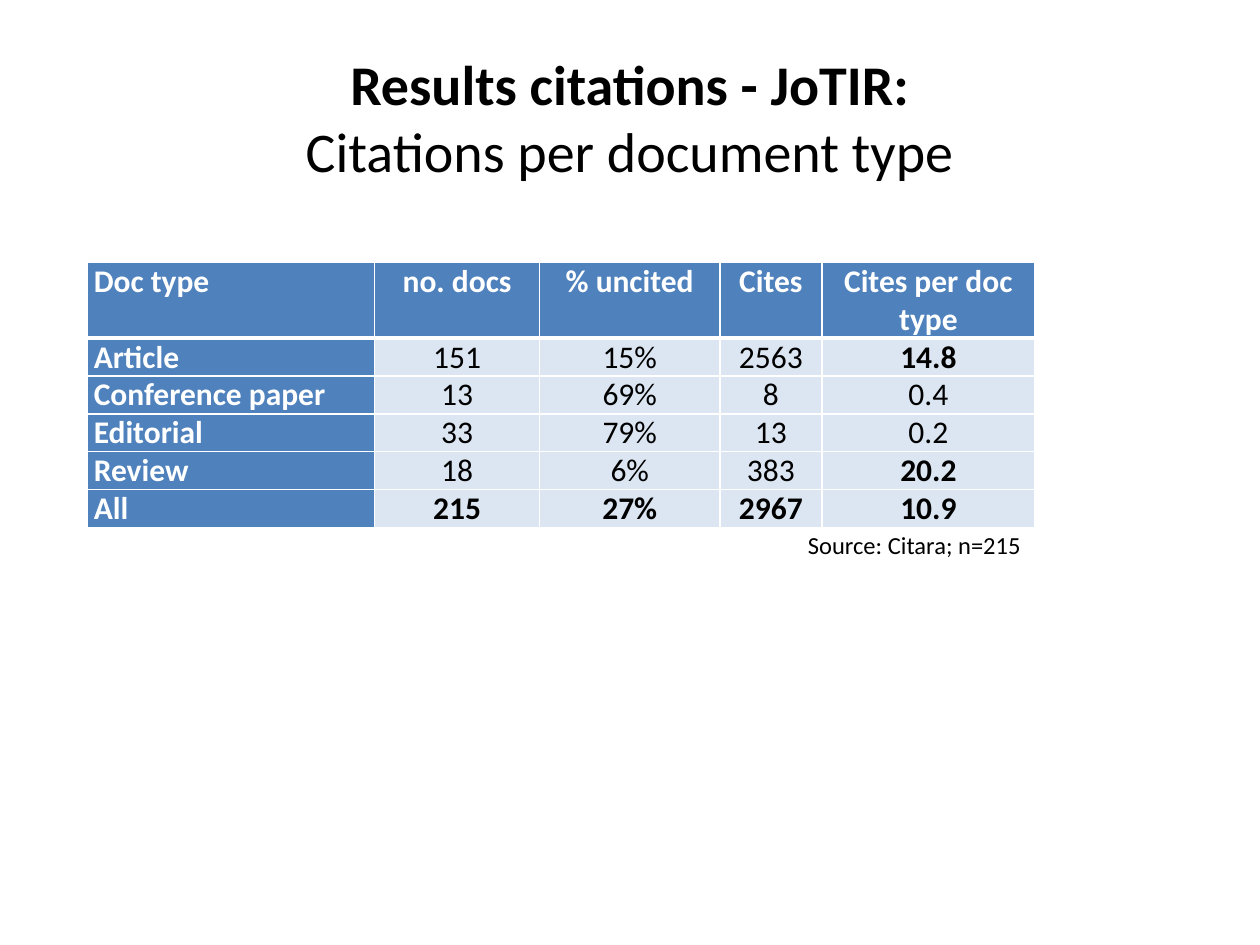
import dataclasses

import lxml.etree
import pptx
import pptx.dml.color
import pptx.enum.text
import pptx.oxml.ns
import pptx.util

Cm = pptx.util.Cm
ALIGN = pptx.enum.text.PP_ALIGN
ANCHOR = pptx.enum.text.MSO_ANCHOR
FIT = pptx.enum.text.MSO_AUTO_SIZE


@dataclasses.dataclass(frozen=True)
class Theme:
    font: str = "Calibri"
    text: str = "000000"
    light: str = "FFFFFF"
    header: str = "4F81BD"
    body: str = "DCE6F2"
    title_size: int = 32
    table_size: int = 18
    source_size: int = 14
    thin_border: int = 1
    thick_border: int = 3


class SlideBuilder:
    def __init__(self, slide, theme):
        self.slide = slide
        self.theme = theme

    def apply(self, target, values):
        for name, value in values.items():
            setattr(target, name, value)

    def add_run(self, paragraph, text, size, color, bold=False):
        run = paragraph.add_run()
        run.text = text
        self.apply(run.font, {"name": self.theme.font, "size": pptx.util.Pt(size), "bold": bold})
        run.font.color.rgb = pptx.dml.color.RGBColor.from_string(color)

    def add_text(self, box, lines, size, alignment, frame_format):
        shape = self.slide.shapes.add_textbox(*map(Cm, box))
        self.apply(shape.text_frame, {"word_wrap": True, **frame_format})
        paragraph = shape.text_frame.paragraphs[0]
        paragraph.alignment = alignment
        for index, (text, bold) in enumerate(lines):
            if index:
                paragraph.add_line_break()
            self.add_run(paragraph, text, size, self.theme.text, bold)

    def add_border(self, cell, side, width):
        properties = cell._tc.get_or_add_tcPr()
        qn = pptx.oxml.ns.qn
        line = lxml.etree.SubElement(properties, qn(f"a:ln{side}"), w=str(pptx.util.Pt(width)))
        fill = lxml.etree.SubElement(line, qn("a:solidFill"))
        lxml.etree.SubElement(fill, qn("a:srgbClr"), val=self.theme.light)

    def format_cell(self, cell, text, row, column, bold):
        theme = self.theme
        is_header = row == 0 or column == 0
        self.apply(cell, {"margin_left": Cm(0.13), "margin_right": Cm(0.13),
                          "margin_top": 0, "margin_bottom": 0})
        thick_side = {0: "B", 1: "T"}.get(row)
        for side in "LRTB":
            self.add_border(cell, side, theme.thick_border if side == thick_side else theme.thin_border)
        cell.fill.solid()
        cell.fill.fore_color.rgb = pptx.dml.color.RGBColor.from_string(
            theme.header if is_header else theme.body)
        paragraph = cell.text_frame.paragraphs[0]
        paragraph.alignment = ALIGN.CENTER if column else ALIGN.JUSTIFY
        self.add_run(paragraph, text, theme.table_size,
                     theme.light if is_header else theme.text, is_header or bold)

    def add_table(self, left, top, widths, heights, rows, bold_cells):
        table = self.slide.shapes.add_table(
            len(rows), len(widths), Cm(left), Cm(top), Cm(sum(widths)), Cm(sum(heights))).table
        for column, width in zip(table.columns, widths):
            column.width = Cm(width)
        for row, height in zip(table.rows, heights):
            row.height = Cm(height)
        for row, values in enumerate(rows):
            for column, text in enumerate(values):
                self.format_cell(table.cell(row, column), text, row, column,
                                 (row, column) in bold_cells)


def main():
    presentation = pptx.Presentation()
    presentation.slide_width = Cm(25.4)
    presentation.slide_height = Cm(19.05)
    theme = Theme()
    builder = SlideBuilder(presentation.slides.add_slide(presentation.slide_layouts[6]), theme)

    builder.add_text((1.27, 0.76, 22.86, 3.18),
                     [("Results citations - JoTIR:", True), ("Citations per document type", False)],
                     theme.title_size, ALIGN.CENTER, {"vertical_anchor": ANCHOR.MIDDLE})

    rows = [
        ("Doc type", "no. docs", "% uncited", "Cites", "Cites per doc type"),
        ("Article", "151", "15%", "2563", "14.8"),
        ("Conference paper", "13", "69%", "8", "0.4"),
        ("Editorial", "33", "79%", "13", "0.2"),
        ("Review", "18", "6%", "383", "20.2"),
        ("All", "215", "27%", "2967", "10.9"),
    ]
    total_row = len(rows) - 1
    bold_cells = {(1, 4), (4, 4)} | {(total_row, column) for column in range(1, 5)}
    builder.add_table(1.76, 5.29, (5.79, 3.33, 3.63, 2.06, 4.29),
                      [1.52] + [0.76] * total_row, rows, bold_cells)

    builder.add_text((12.85, 10.57, 7.98, 0.86), [("Source: Citara; n=215", False)],
                     theme.source_size, ALIGN.RIGHT, {"auto_size": FIT.SHAPE_TO_FIT_TEXT})
    presentation.save("out.pptx")


if __name__ == "__main__":
    main()
